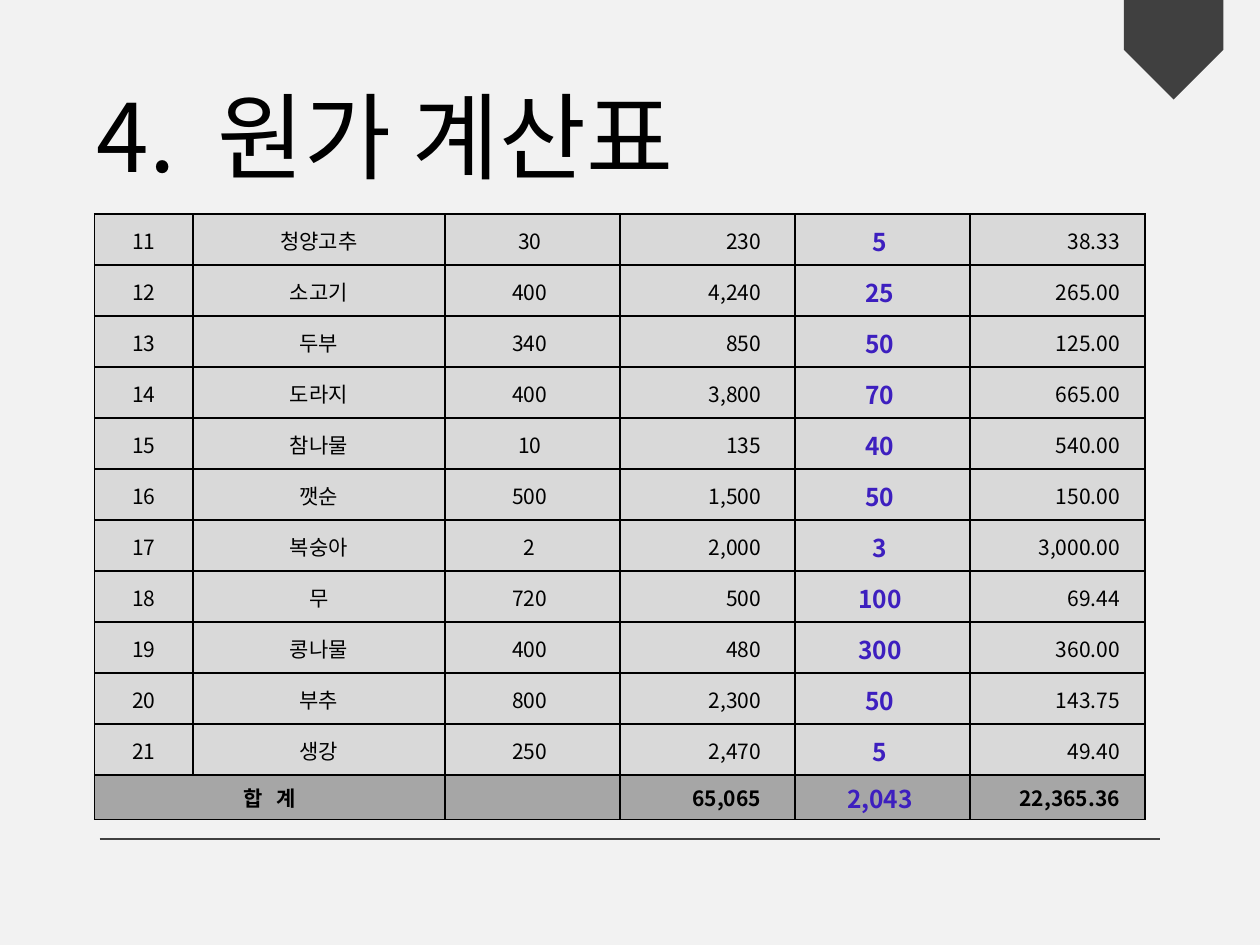
from lxml.etree import SubElement
from pptx import Presentation
from pptx.dml.color import RGBColor
from pptx.enum.shapes import MSO_CONNECTOR, MSO_SHAPE
from pptx.enum.text import MSO_ANCHOR, MSO_AUTO_SIZE, PP_ALIGN
from pptx.oxml import parse_xml
from pptx.oxml.ns import nsdecls, qn
from pptx.util import Inches, Pt

FONT = "Noto Sans CJK KR"
PAPER = RGBColor(0xF2, 0xF2, 0xF2)
DARK = RGBColor(0x40, 0x40, 0x40)
BLACK = RGBColor(0, 0, 0)
BLUE = RGBColor(0x3D, 0x1F, 0xBF)
LIGHT = RGBColor(0xD9, 0xD9, 0xD9)
GRAY = RGBColor(0xA6, 0xA6, 0xA6)

COLS = [0.78, 2] + [1.39] * 4
ALIGNS = [PP_ALIGN.CENTER] * 3 + [PP_ALIGN.RIGHT, PP_ALIGN.CENTER, PP_ALIGN.RIGHT]
INSETS = [0.01, 0.01, 0.05, 0.27, 0.05, 0.2]
AMOUNT = 4
ITEMS = [
    ("11", "청양고추", "30", "230", "5", "38.33"),
    ("12", "소고기", "400", "4,240", "25", "265.00"),
    ("13", "두부", "340", "850", "50", "125.00"),
    ("14", "도라지", "400", "3,800", "70", "665.00"),
    ("15", "참나물", "10", "135", "40", "540.00"),
    ("16", "깻순", "500", "1,500", "50", "150.00"),
    ("17", "복숭아", "2", "2,000", "3", "3,000.00"),
    ("18", "무", "720", "500", "100", "69.44"),
    ("19", "콩나물", "400", "480", "300", "360.00"),
    ("20", "부추", "800", "2,300", "50", "143.75"),
    ("21", "생강", "250", "2,470", "5", "49.40"),
]
TOTAL = ("합 계", "", "", "65,065", "2,043", "22,365.36")


def add_run(para, text, size, color=BLACK, bold=False, gap=0):
    run = para.add_run()
    run.text = text
    font = run.font
    font.size, font.name, font.bold = Pt(size), FONT, bold
    font.color.rgb = color
    props = run._r.get_or_add_rPr()
    SubElement(props, qn("a:ea")).set("typeface", FONT)
    if gap:
        props.set("spc", str(int(gap * 100)))


def add_words(para, text, size, gap, bold=False):
    head, tail = text.split(" ", 1)
    add_run(para, head, size, bold=bold)
    add_run(para, " ", size, bold=bold, gap=gap)
    add_run(para, tail, size, bold=bold)


def add_badge(slide):
    side = Inches(0.79)
    badge = slide.shapes.add_shape(MSO_SHAPE.PENTAGON, Inches(8.92), 0, side, side)
    badge.rotation = 90
    badge.shadow.inherit = False
    badge.fill.solid()
    badge.fill.fore_color.rgb = DARK
    badge.line.fill.background()


def add_rule(slide, wide, high):
    left, top = Inches(0.79), int(high * 0.888)
    rule = slide.shapes.add_connector(MSO_CONNECTOR.STRAIGHT, left, top, wide - left, top)
    rule.line.color.rgb = DARK
    rule.line.width = Pt(0.75)
    SubElement(rule._element.spPr, qn("a:effectLst"))


def add_title(slide):
    box = slide.shapes.add_textbox(Inches(0.67), Inches(0.67), Inches(8.58), Inches(1.01))
    frame = box.text_frame
    frame.word_wrap = True
    frame.auto_size = MSO_AUTO_SIZE.SHAPE_TO_FIT_TEXT
    para = frame.paragraphs[0]
    para.line_spacing = 0.9
    add_words(para, "4. 원가 계산표", 54, 12)


def style_cell(cell, fill, inset):
    props = cell._tc.get_or_add_tcPr()
    for side in "LRTB":
        props.append(parse_xml(
            f'<a:ln{side} {nsdecls("a")} w="12700"><a:solidFill>'
            f'<a:srgbClr val="{BLACK}"/></a:solidFill></a:ln{side}>'))
    cell.fill.solid()
    cell.fill.fore_color.rgb = fill
    cell.vertical_anchor = MSO_ANCHOR.MIDDLE
    cell.margin_left = cell.margin_top = Inches(0.01)
    cell.margin_right, cell.margin_bottom = Inches(inset), 0


def fill_row(table, row, values, fill, total=False):
    for col, text in enumerate(values):
        cell = table.cell(row, col)
        style_cell(cell, fill, INSETS[col])
        para = cell.text_frame.paragraphs[0]
        para.alignment = ALIGNS[col]
        if " " in text:
            add_words(para, text, 12, 5.4, bold=True)
        elif col == AMOUNT:
            add_run(para, text, 14, BLUE, True)
        elif text:
            add_run(para, text, 12, bold=total)


def add_costs(slide):
    count = len(ITEMS) + 1
    frame = slide.shapes.add_table(count, len(COLS), Inches(0.75), Inches(1.7),
                                   Inches(sum(COLS)), Inches(4.8))
    table = frame.table
    table.first_row = table.horz_banding = False
    for col, width in zip(table.columns, COLS):
        col.width = Inches(width)
    for row in table.rows:
        row.height = Inches(0.405)
    table.rows[count - 1].height = Inches(0.35)
    for row, item in enumerate(ITEMS):
        fill_row(table, row, item, LIGHT)
    last = count - 1
    fill_row(table, last, TOTAL, GRAY, True)
    table.cell(last, 0).merge(table.cell(last, 1))


def main():
    deck = Presentation()
    deck.slide_width, deck.slide_height = Inches(10), Inches(7.5)
    slide = deck.slides.add_slide(deck.slide_layouts[6])
    slide.background.fill.solid()
    slide.background.fill.fore_color.rgb = PAPER
    add_badge(slide)
    add_rule(slide, deck.slide_width, deck.slide_height)
    add_title(slide)
    add_costs(slide)
    deck.save("out.pptx")


if __name__ == "__main__":
    main()
